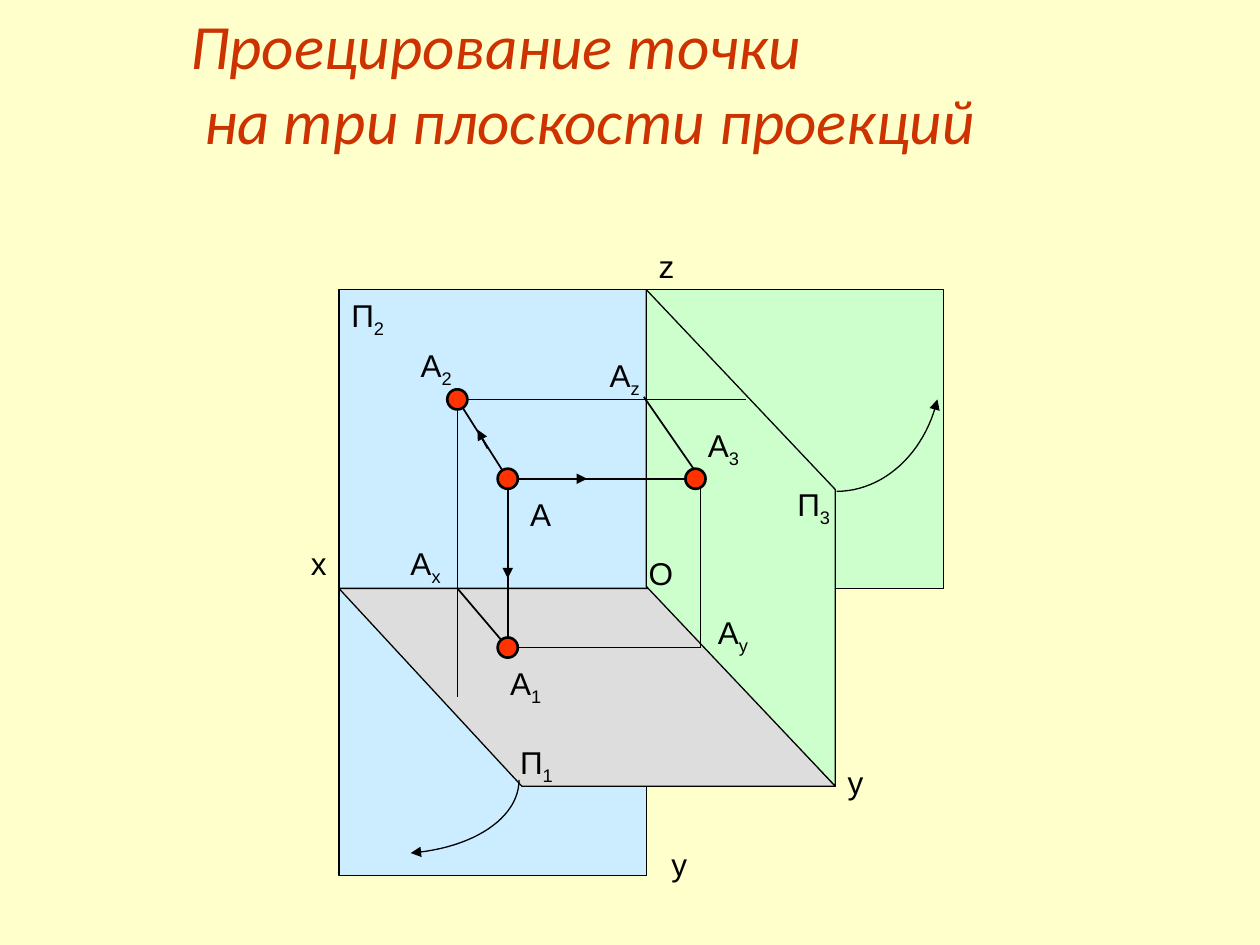
from dataclasses import dataclass

from lxml.etree import SubElement
from pptx import Presentation
from pptx.dml.color import RGBColor
from pptx.enum.shapes import MSO_CONNECTOR, MSO_SHAPE
from pptx.enum.text import MSO_ANCHOR, MSO_AUTO_SIZE, PP_ALIGN
from pptx.oxml.ns import qn
from pptx.util import Inches, Pt


@dataclass(frozen=True)
class Theme:
    background: str = "FFFFCC"
    blue: str = "CCECFF"
    green: str = "CDFFCD"
    grey: str = "DDDDDD"
    dot: str = "FF3300"
    ink: str = "000000"
    title: str = "CC3300"
    title_font: str = "Calibri"
    label_font: str = "Arial"
    title_size: float = 36
    label_size: float = 18
    thin: float = 0.75
    line: float = 1
    bold: float = 1.5


THEME = Theme()

# Grid of the drawing, in inches
X, AX, A, O, AY, Y, RIGHT = 2.69, 3.63, 4.03, 5.13, 5.56, 6.63, 7.49
TOP, ROW_A2, ROW_A, AXIS, ROW_A1, FRONT, BOTTOM = 2.3, 3.17, 3.8, 4.67, 5.14, 6.24, 6.95
A3 = 5.52
DOT = 0.16


def color(value):
    return RGBColor.from_string(value)


def set_line(sp, width):
    sp.line.color.rgb = color(THEME.ink)
    sp.line.width = Pt(width)


def add_arrowhead(sp):
    SubElement(sp.line._get_or_add_ln(), qn("a:tailEnd"), type="triangle")


def add_plane(s, shape, left, top, right, bottom, fill, width=THEME.thin):
    sp = s.shapes.add_shape(shape, Inches(left), Inches(top),
                            Inches(right - left), Inches(bottom - top))
    sp.shadow.inherit = False
    sp.fill.solid()
    sp.fill.fore_color.rgb = color(fill)
    set_line(sp, width)
    return sp


def flip(sp, *axes):
    for axis in axes:
        sp._element.spPr.xfrm.set(axis, "1")


def add_dot(s, x, y):
    r = DOT / 2
    add_plane(s, MSO_SHAPE.OVAL, x - r, y - r, x + r, y + r, THEME.dot, THEME.bold)


def add_segment(s, x1, y1, x2, y2, arrow=False):
    sp = s.shapes.add_connector(MSO_CONNECTOR.STRAIGHT, Inches(x1), Inches(y1),
                                Inches(x2), Inches(y2))
    set_line(sp, THEME.line)
    if arrow:
        add_arrowhead(sp)
    SubElement(sp._element.spPr, qn("a:effectLst"))


def add_turn_arrow(s, *controls, steps=24):
    """Cubic curve through four control points, with a head at its end."""
    def at(t):
        weights = ((1 - t) ** 3, 3 * t * (1 - t) ** 2, 3 * t * t * (1 - t), t ** 3)
        return tuple(Inches(sum(w * c[i] for w, c in zip(weights, controls)))
                     for i in (0, 1))

    points = [at(n / steps) for n in range(steps + 1)]
    builder = s.shapes.build_freeform(*points[0])
    builder.add_line_segments(points[1:], close=False)
    sp = builder.convert_to_shape()
    sp.shadow.inherit = False
    sp.fill.background()
    set_line(sp, THEME.thin)
    add_arrowhead(sp)


def add_label(s, left, top, text, index=""):
    width = 0.46 if index else 0.34
    tf = s.shapes.add_textbox(Inches(left), Inches(top), Inches(width), Inches(0.4)).text_frame
    tf.word_wrap = False
    tf.auto_size = MSO_AUTO_SIZE.SHAPE_TO_FIT_TEXT
    p = tf.paragraphs[0]
    p.font.size = Pt(THEME.label_size)
    p.font.name = THEME.label_font
    p.font.color.rgb = color(THEME.ink)
    p.add_run().text = text
    if index:
        r = p.add_run()
        r.text = index
        r.font._element.set("baseline", "-25000")


def add_title(s, lines, second_indent):
    sp = s.shapes.title
    sp.left, sp.top, sp.width, sp.height = (Inches(v) for v in (1.41, 0, 7.01, 1.3))
    tf = sp.text_frame
    tf.text = "\n".join(lines)
    tf.word_wrap = False
    tf.auto_size = MSO_AUTO_SIZE.NONE
    tf.vertical_anchor = MSO_ANCHOR.TOP
    for p in tf.paragraphs:
        p.alignment = PP_ALIGN.LEFT
        p.line_spacing = 1.0
        p.font.size = Pt(THEME.title_size)
        p.font.name = THEME.title_font
        p.font.italic = True
        p.font.color.rgb = color(THEME.title)
    tf.paragraphs[1]._p.get_or_add_pPr().set("marL", str(Inches(second_indent)))


def add_planes(s):
    # Unfolded planes
    add_plane(s, MSO_SHAPE.RECTANGLE, X, AXIS, O, BOTTOM, THEME.blue)
    add_plane(s, MSO_SHAPE.RECTANGLE, O, TOP, RIGHT, AXIS, THEME.green)
    add_plane(s, MSO_SHAPE.RECTANGLE, X, TOP, O, AXIS, THEME.blue)
    # Horizontal plane
    sp = add_plane(s, MSO_SHAPE.PARALLELOGRAM, X, AXIS, Y, FRONT, THEME.grey)
    sp.adjustments[0] = 0.925
    flip(sp, "flipH")
    # Profile plane: its frame is turned by 90 degrees about the centre
    cx, cy = (O + Y) / 2, (TOP + FRONT) / 2
    half_w, half_h = (FRONT - TOP) / 2, (Y - O) / 2
    sp = add_plane(s, MSO_SHAPE.PARALLELOGRAM, cx - half_w, cy - half_h,
                   cx + half_w, cy + half_h, THEME.green)
    sp.adjustments[0] = 1.057
    sp.rotation = 90
    flip(sp, "flipH", "flipV")


def main():
    prs = Presentation()
    prs.slide_width, prs.slide_height = Inches(10), Inches(7.5)
    s = prs.slides.add_slide(prs.slide_layouts[5])
    s.background.fill.solid()
    s.background.fill.fore_color.rgb = color(THEME.background)

    add_title(s, ["Проецирование точки", "на три плоскости проекций"], 0.11)
    add_planes(s)

    # Projection lines
    for ends in [(A, ROW_A, A, ROW_A1), (A, ROW_A1, AX, AXIS), (A, ROW_A, AX, ROW_A2),
                 (AX, ROW_A2, AX, 5.53), (AX, ROW_A2, 5.92, ROW_A2),
                 (A, ROW_A, AY, ROW_A), (A, ROW_A1, AY, ROW_A1),
                 (AY, ROW_A1, AY, ROW_A), (AY, ROW_A, 5.11, 3.15)]:
        add_segment(s, *ends)

    # Directions of projection
    for ends in [(A, 4.35, A, 4.59), (3.87, 3.56, 3.79, 3.41), (4.42, ROW_A, 4.66, ROW_A)]:
        add_segment(s, *ends, arrow=True)

    # Turning of the planes
    add_turn_arrow(s, (4.12, 6.19), (4.12, 6.49), (3.76, 6.73), (3.26, 6.77))
    add_turn_arrow(s, (6.64, 3.9), (7.01, 3.9), (7.34, 3.6), (7.44, 3.17))

    # Point and its projections
    for x, y in [(A, ROW_A), (AX, ROW_A2), (A, ROW_A1), (A3, ROW_A)]:
        add_dot(s, x, y)

    # Names of planes, points and axes
    for label in [(X, TOP, "П", "2"), (4.03, 5.85, "П", "1"), (6.23, 3.8, "П", "3"),
                  (3.95, 5.22, "А", "1"), (3.24, 2.7, "А", "2"), (5.52, 3.33, "А", "3"),
                  (3.16, 4.27, "А", "х"), (5.6, 4.82, "А", "y"), (4.74, 2.78, "А", "z"),
                  (4.11, 3.88, "А"), (5.05, 4.35, "O"), (2.37, 4.27, "x"),
                  (6.63, 6.01, "y"), (5.23, 6.66, "y"), (5.13, 1.91, "z")]:
        add_label(s, *label)

    prs.save("out.pptx")


if __name__ == "__main__":
    main()
